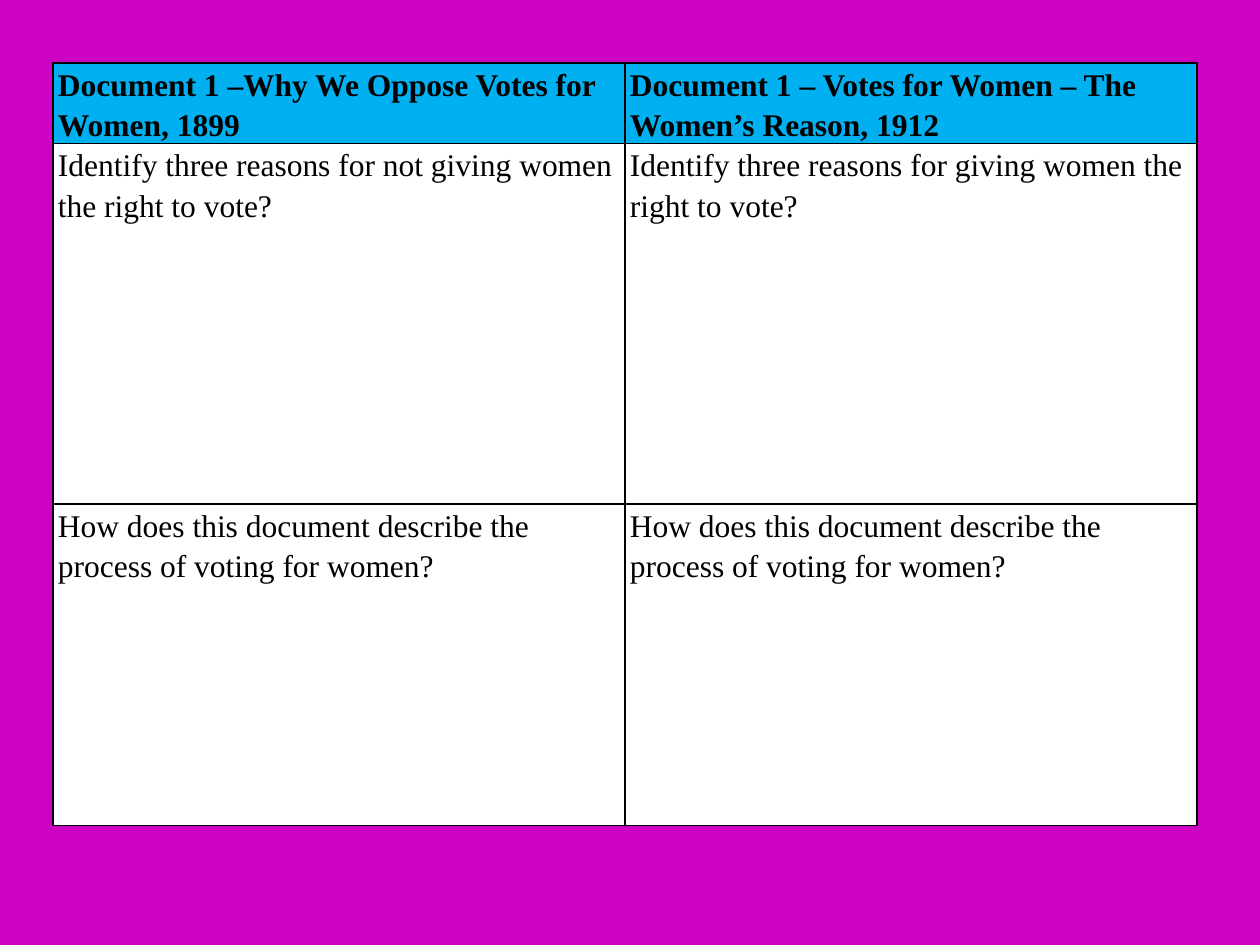
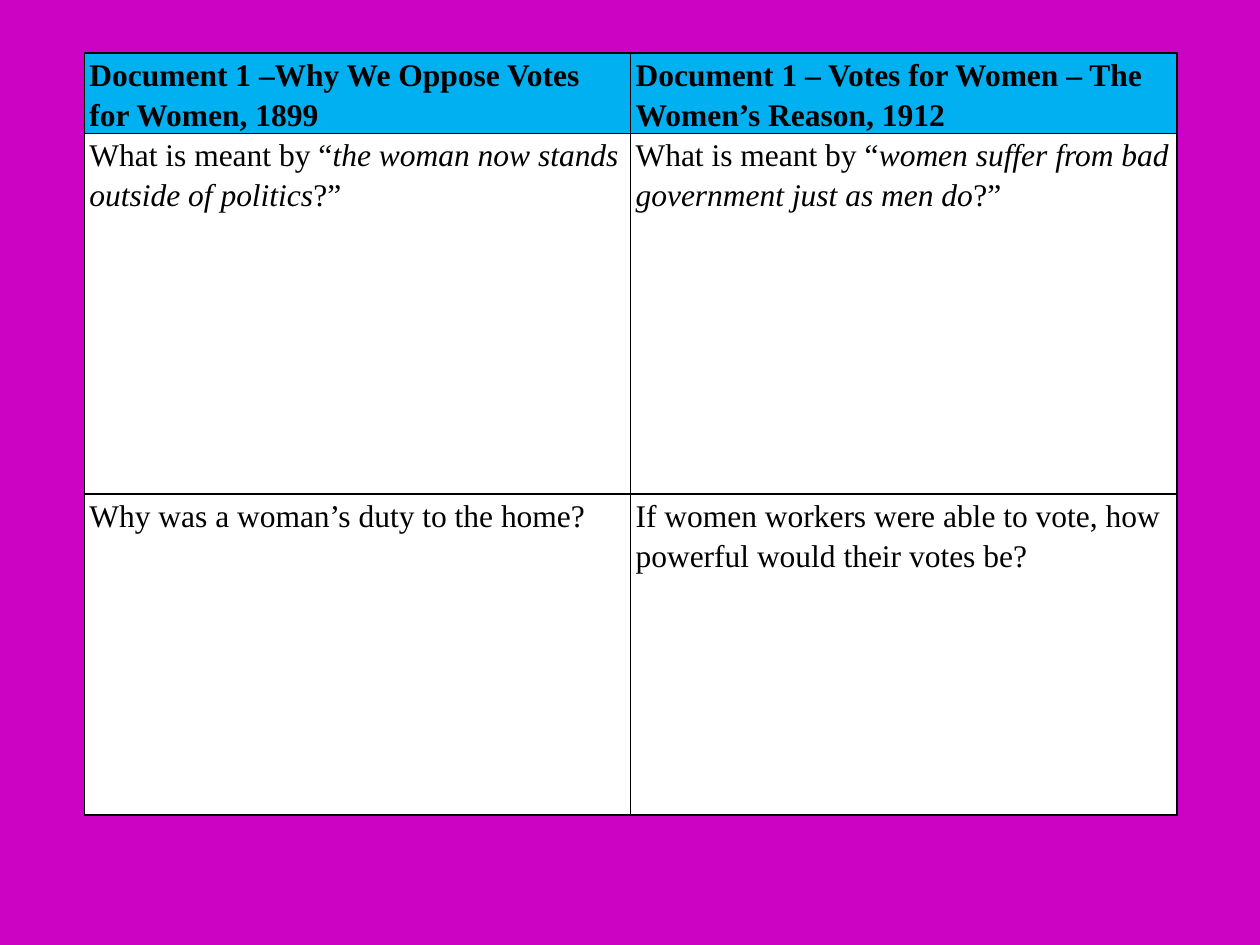
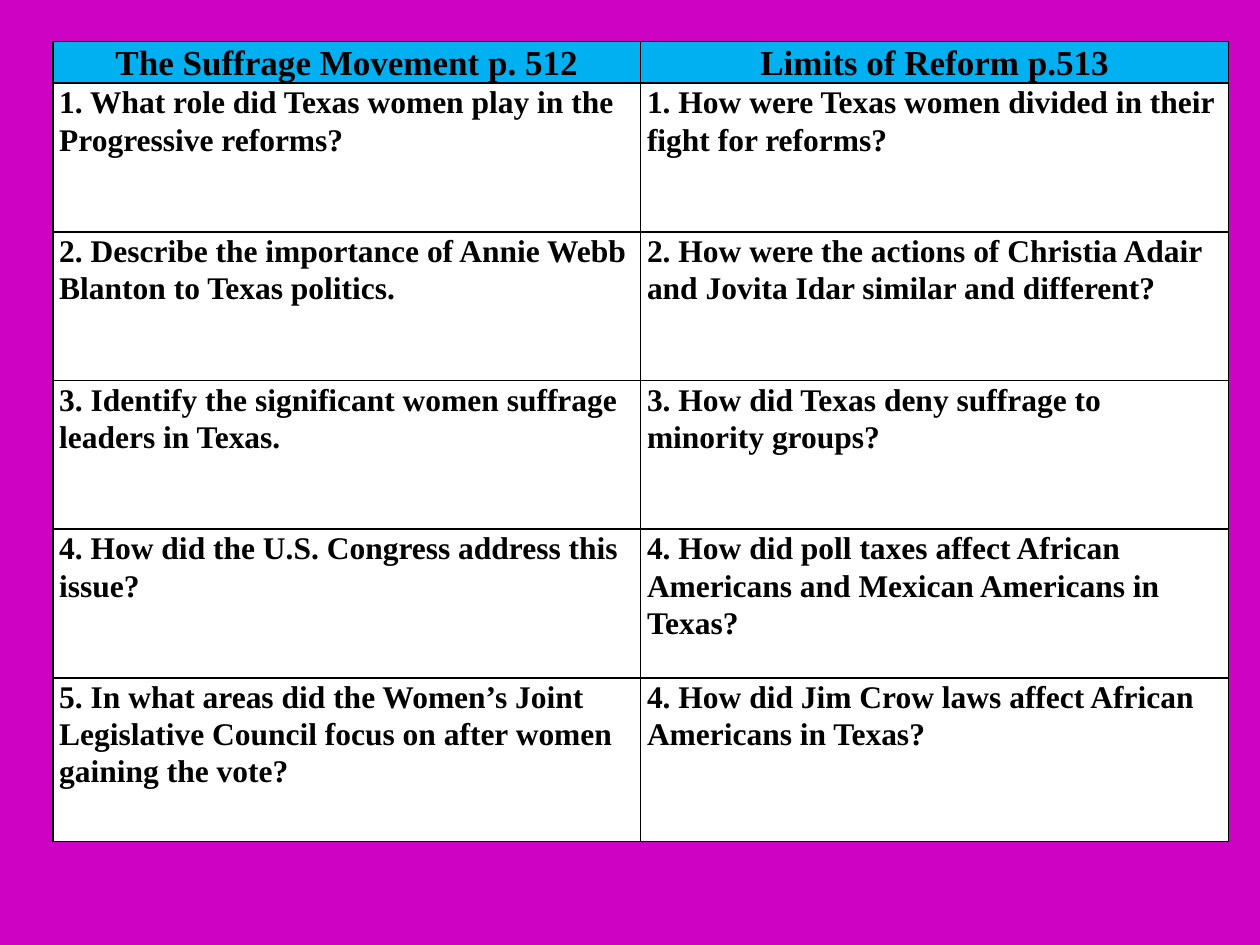
"""Builds three women's suffrage worksheets, each a bordered two-column table."""
from lxml import etree
from pptx import Presentation
from pptx.dml.color import RGBColor
from pptx.enum.text import PP_ALIGN
from pptx.oxml.ns import qn
from pptx.util import Inches, Pt

CENTER, LEFT = PP_ALIGN.CENTER, PP_ALIGN.LEFT
FONT = "Times New Roman"
PURPLE, BLUE, WHITE, BLACK = "CD03C3", "00B0F0", "FFFFFF", "000000"
BODY_SIZE = 18
ITALIC_MARK = "*"

DOCUMENT_STYLE = {"header_size": 18, "header_align": LEFT, "body_bold": False,
                  "spacing": 1.15, "margin": 0.04}
READING_STYLE = {"header_size": 20, "header_align": CENTER, "body_bold": True,
                 "spacing": 1.07, "margin": 0.05}
DOCUMENT_HEADERS = ("Document 1 –Why We Oppose Votes for Women, 1899",
                    "Document 1 – Votes for Women – The Women’s Reason, 1912")
DOCUMENT_HEIGHTS = [0.64, 2.86, 2.55]
VOTING_PROCESS = "How does this document describe the process of voting for women?"

WORKSHEETS = [
    {"left": 0.42, "top": 0.5, "width": 9.08, "heights": DOCUMENT_HEIGHTS,
     "style": DOCUMENT_STYLE,
     "rows": [
         DOCUMENT_HEADERS,
         ("Identify three reasons for not giving women the right to vote?",
          "Identify three reasons for giving women the right to vote?"),
         (VOTING_PROCESS, VOTING_PROCESS),
     ]},
    {"left": 0.67, "top": 0.42, "width": 8.67, "heights": DOCUMENT_HEIGHTS,
     "style": DOCUMENT_STYLE,
     "rows": [
         DOCUMENT_HEADERS,
         ("What is meant by “*the woman now stands outside of politics*?”",
          "What is meant by “*women suffer from bad government just as men do*?”"),
         ("Why was a woman’s duty to the home?",
          "If women workers were able to vote, how powerful would their votes be?"),
     ]},
    {"left": 0.42, "top": 0.33, "width": 9.33, "heights": [0.33] + [1.18] * 4 + [1.3],
     "style": READING_STYLE,
     "rows": [
         ("The Suffrage Movement p. 512", "Limits of Reform p.513"),
         ("1. What role did Texas women play in the Progressive reforms?",
          "1. How were Texas women divided in their fight for reforms?"),
         ("2. Describe the importance of Annie Webb Blanton to Texas politics.",
          "2. How were the actions of Christia Adair and Jovita Idar similar and different?"),
         ("3. Identify the significant women suffrage leaders in Texas.",
          "3. How did Texas deny suffrage to minority groups?"),
         ("4. How did the U.S. Congress address this issue?",
          "4. How did poll taxes affect African Americans and Mexican Americans in Texas?"),
         ("5. In what areas did the Women’s Joint Legislative Council focus on "
          "after women gaining the vote?",
          "4. How did Jim Crow laws affect African Americans in Texas?"),
     ]},
]


def paint(fill, color):
    fill.solid()
    fill.fore_color.rgb = RGBColor.from_string(color)


def add_borders(cell):
    properties = cell._tc.get_or_add_tcPr()
    for side in ("lnL", "lnR", "lnT", "lnB"):
        line = etree.SubElement(properties, qn(f"a:{side}"), w=str(Pt(1)))
        solid = etree.SubElement(line, qn("a:solidFill"))
        etree.SubElement(solid, qn("a:srgbClr"), val=BLACK)


def write_cell(cell, text, style, is_header):
    add_borders(cell)
    paint(cell.fill, BLUE if is_header else WHITE)
    cell.margin_left = cell.margin_right = Inches(style["margin"])
    cell.margin_top = cell.margin_bottom = 0
    para = cell.text_frame.paragraphs[0]
    para.alignment = style["header_align"] if is_header else LEFT
    para.line_spacing = style["spacing"]
    for index, part in enumerate(text.split(ITALIC_MARK)):
        span = para.add_run()
        span.text = part
        span.font.name = FONT
        span.font.size = Pt(style["header_size"] if is_header else BODY_SIZE)
        span.font.bold = is_header or style["body_bold"]
        span.font.italic = index % 2 == 1
        paint(span.font.fill, BLACK)


def add_worksheet(deck, sheet):
    page = deck.slides.add_slide(deck.slide_layouts[6])
    rows, heights = sheet["rows"], sheet["heights"]
    frame = page.shapes.add_table(
        len(rows), len(rows[0]), Inches(sheet["left"]), Inches(sheet["top"]),
        Inches(sheet["width"]), Inches(sum(heights)))
    table = frame.table
    table.first_row = table.horz_banding = False
    for row_index, (texts, height) in enumerate(zip(rows, heights)):
        table.rows[row_index].height = Inches(height)
        for column_index, text in enumerate(texts):
            write_cell(table.cell(row_index, column_index), text, sheet["style"],
                       row_index == 0)


def main():
    deck = Presentation()
    deck.slide_width, deck.slide_height = Inches(10), Inches(7.5)
    paint(deck.slide_master.background.fill, PURPLE)
    for sheet in WORKSHEETS:
        add_worksheet(deck, sheet)
    deck.save("out.pptx")


if __name__ == "__main__":
    main()
